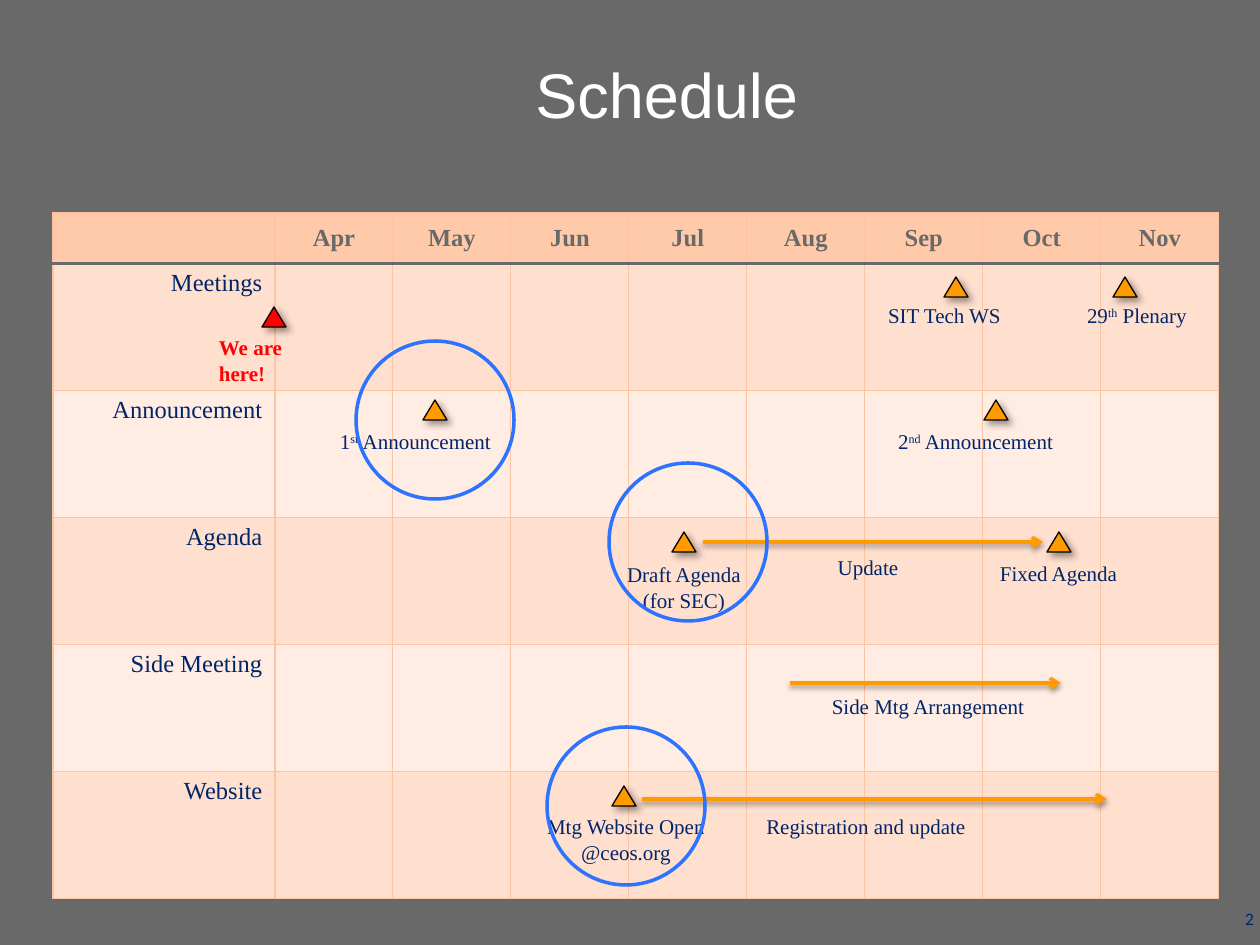
from dataclasses import dataclass

from lxml.etree import SubElement
from pptx import Presentation
from pptx.dml.color import RGBColor
from pptx.enum.shapes import MSO_CONNECTOR, MSO_SHAPE
from pptx.enum.text import MSO_ANCHOR, PP_ALIGN
from pptx.oxml import parse_xml
from pptx.oxml.ns import nsdecls, qn
from pptx.util import Emu, Pt

PX = 914400 / 126


@dataclass(frozen=True)
class Theme:
    background: str = "696969"
    title: str = "FFFFFF"
    text: str = "002569"
    accent: str = "FF9A00"
    alert: str = "FF0000"
    ring: str = "2D73FF"
    outline: str = "000000"
    header: str = "FFCAAA"
    bands: tuple = ("FFDFCE", "FFECE2")
    grid: str = "FBC5A4"
    serif: str = "Times New Roman"
    title_font: str = "Arial"
    number_font: str = "Calibri"
    title_size: int = 36
    table_size: int = 14
    label_size: int = 12
    number_size: int = 10


THEME = Theme()

# Table content and grid
MONTHS = ["Apr", "May", "Jun", "Jul", "Aug", "Sep", "Oct", "Nov"]
ACTIVITIES = ["Meetings", "Announcement", "Agenda", "Side Meeting", "Website"]
TABLE_LEFT, TABLE_TOP = 53, 213
NAME_WIDTH, MONTH_WIDTH = 222, 118
HEADER_HEIGHT, ROW_HEIGHT = 44, 127

# Milestones: left, top
MILESTONES = [(1113, 277), (944, 277), (423, 400), (984, 400),
              (672, 532), (1047, 532), (612, 786)]

# Labels: left, top, width, alignment, lines of runs ("^" marks a superscript)
LEFT, CENTER = PP_ALIGN.LEFT, PP_ALIGN.CENTER
LABELS = [
    (334, 423, 202, LEFT, [["1", "^st", " Announcement"]]),
    (892, 423, 207, LEFT, [["2", "^nd", " Announcement"]]),
    (1081, 297, 132, LEFT, [["29", "^th", " Plenary"]]),
    (882, 297, 147, LEFT, [["SIT Tech WS"]]),
    (609, 556, 150, CENTER, [["Draft Agenda"], ["(for SEC)"]]),
    (983, 555, 151, CENTER, [["Fixed Agenda"]]),
    (825, 549, 86, CENTER, [["Update"]]),
    (525, 808, 202, CENTER, [["Mtg Website Open"], ["@ceos.org"]]),
    (736, 808, 260, CENTER, [["Registration and update"]]),
    (805, 688, 246, CENTER, [["Side Mtg Arrangement"]]),
]

# Periods: start x, end x, y; rings: left, top
PERIODS = [(703, 1043, 542), (642, 1107, 799), (790, 1061, 683)]
RINGS = [(609, 463), (547, 727), (356, 341)]


def px(value):
    return Emu(round(value * PX))


def box(left, top, width, height):
    return px(left), px(top), px(width), px(height)


def rgb(color):
    return RGBColor.from_string(color)


def add_run(paragraph, text, size, color, font=THEME.serif, bold=False):
    run = paragraph.add_run()
    run.text = text.removeprefix("^")
    run.font.size, run.font.name, run.font.bold = Pt(size), font, bold
    run.font.color.rgb = rgb(color)
    if text.startswith("^"):
        run._r.get_or_add_rPr().set("baseline", "30000")


def add_shadow(shape, alpha, blur, distance, angle):
    properties = shape._element.spPr
    for old in properties.findall(qn("a:effectLst")):
        properties.remove(old)
    properties.append(parse_xml(
        f'<a:effectLst {nsdecls("a")}><a:outerShdw blurRad="{Pt(blur)}" '
        f'dist="{Pt(distance)}" dir="{angle * 60000}" rotWithShape="0">'
        f'<a:srgbClr val="{THEME.outline}"><a:alpha val="{alpha * 1000}"/>'
        '</a:srgbClr></a:outerShdw></a:effectLst>'))


def add_title(slide, text):
    title = slide.shapes.title
    title.left, title.top, title.width, title.height = box(95, 42, 1126, 90)
    frame = title.text_frame
    frame.vertical_anchor = MSO_ANCHOR.TOP
    frame.margin_top = px(13)
    paragraph = frame.paragraphs[0]
    paragraph.alignment = CENTER
    add_run(paragraph, text, THEME.title_size, THEME.title, THEME.title_font)


def add_label(slide, left, top, width, alignment, lines,
              size=THEME.label_size, color=THEME.text, font=THEME.serif, bold=False):
    height = 13 + 25 * len(lines)
    frame = slide.shapes.add_textbox(*box(left, top, width, height)).text_frame
    frame.word_wrap = True
    frame.margin_left = frame.margin_right = px(6)
    frame.margin_top = frame.margin_bottom = px(6)
    for index, runs in enumerate(lines):
        paragraph = frame.add_paragraph() if index else frame.paragraphs[0]
        paragraph.alignment = alignment
        for text in runs:
            add_run(paragraph, text, size, color, font, bold)


def set_borders(cell, top, bottom):
    """Each border is a (color, points) pair; the sides use the grid line."""
    side = (THEME.grid, 0.75)
    properties = cell._tc.get_or_add_tcPr()
    borders = [("L", side), ("R", side), ("T", top), ("B", bottom)]
    for position, (name, (color, width)) in enumerate(borders):
        line = SubElement(properties, qn(f"a:ln{name}"), w=str(Pt(width)))
        fill = SubElement(line, qn("a:solidFill"))
        SubElement(fill, qn("a:srgbClr"), val=color)
        properties.insert(position, line)


def add_schedule_table(slide):
    rows, columns = len(ACTIVITIES) + 1, len(MONTHS) + 1
    width = NAME_WIDTH + MONTH_WIDTH * len(MONTHS)
    height = HEADER_HEIGHT + ROW_HEIGHT * len(ACTIVITIES)
    table = slide.shapes.add_table(
        rows, columns, *box(TABLE_LEFT, TABLE_TOP, width, height)).table
    table.first_row = table.horz_banding = False
    for index, column in enumerate(table.columns):
        column.width = px(MONTH_WIDTH if index else NAME_WIDTH)
    thin, thick = (THEME.grid, 0.75), (THEME.background, 2)
    for row_index, row in enumerate(table.rows):
        row.height = px(ROW_HEIGHT if row_index else HEADER_HEIGHT)
        for column_index, cell in enumerate(row.cells):
            cell.fill.solid()
            band = THEME.bands[(row_index - 1) % 2] if row_index else THEME.header
            cell.fill.fore_color.rgb = rgb(band)
            set_borders(cell, thick if row_index == 1 else thin,
                        thin if row_index else thick)
            paragraph = cell.text_frame.paragraphs[0]
            if row_index == 0 and column_index:
                cell.vertical_anchor = MSO_ANCHOR.MIDDLE
                paragraph.alignment = CENTER
                add_run(paragraph, MONTHS[column_index - 1], THEME.table_size,
                        THEME.background, bold=True)
            elif row_index and column_index == 0:
                paragraph.alignment = PP_ALIGN.RIGHT
                add_run(paragraph, ACTIVITIES[row_index - 1], THEME.table_size, THEME.text)


def add_milestone(slide, left, top, color=THEME.accent):
    marker = slide.shapes.add_shape(MSO_SHAPE.ISOSCELES_TRIANGLE, *box(left, top, 24, 20))
    marker.fill.solid()
    marker.fill.fore_color.rgb = rgb(color)
    marker.line.color.rgb = rgb(THEME.outline)
    marker.line.width = Pt(0.75)
    add_shadow(marker, 40, 4, 3, 45)


def add_period(slide, start, end, y):
    arrow = slide.shapes.add_connector(
        MSO_CONNECTOR.STRAIGHT, px(start), px(y), px(end), px(y))
    arrow.line.color.rgb = rgb(THEME.accent)
    arrow.line.width = Pt(2)
    SubElement(arrow.line._get_or_add_ln(), qn("a:tailEnd"), type="arrow")
    add_shadow(arrow, 38, 3, 1.6, 90)


def add_ring(slide, left, top):
    ring = slide.shapes.add_shape(MSO_SHAPE.OVAL, *box(left, top, 158, 158))
    ring.shadow.inherit = False
    ring.fill.background()
    ring.line.color.rgb = rgb(THEME.ring)
    ring.line.width = Pt(2)


def main():
    presentation = Presentation()
    presentation.slide_width, presentation.slide_height = px(1260), px(945)
    slide = presentation.slides.add_slide(presentation.slide_layouts[5])
    slide.background.fill.solid()
    slide.background.fill.fore_color.rgb = rgb(THEME.background)

    # Page frame
    add_label(slide, 998, 902, 262, PP_ALIGN.RIGHT, [["2"]],
              THEME.number_size, font=THEME.number_font)
    add_title(slide, " Schedule")

    # Schedule and its events
    add_schedule_table(slide)
    for milestone in MILESTONES:
        add_milestone(slide, *milestone)
    for label in LABELS:
        add_label(slide, *label)
    for period in PERIODS:
        add_period(slide, *period)
    for ring in RINGS:
        add_ring(slide, *ring)

    # Current position
    add_milestone(slide, 262, 307, THEME.alert)
    add_label(slide, 213, 329, 123, LEFT, [["We are here!"]], color=THEME.alert, bold=True)
    presentation.save("out.pptx")


if __name__ == "__main__":
    main()
